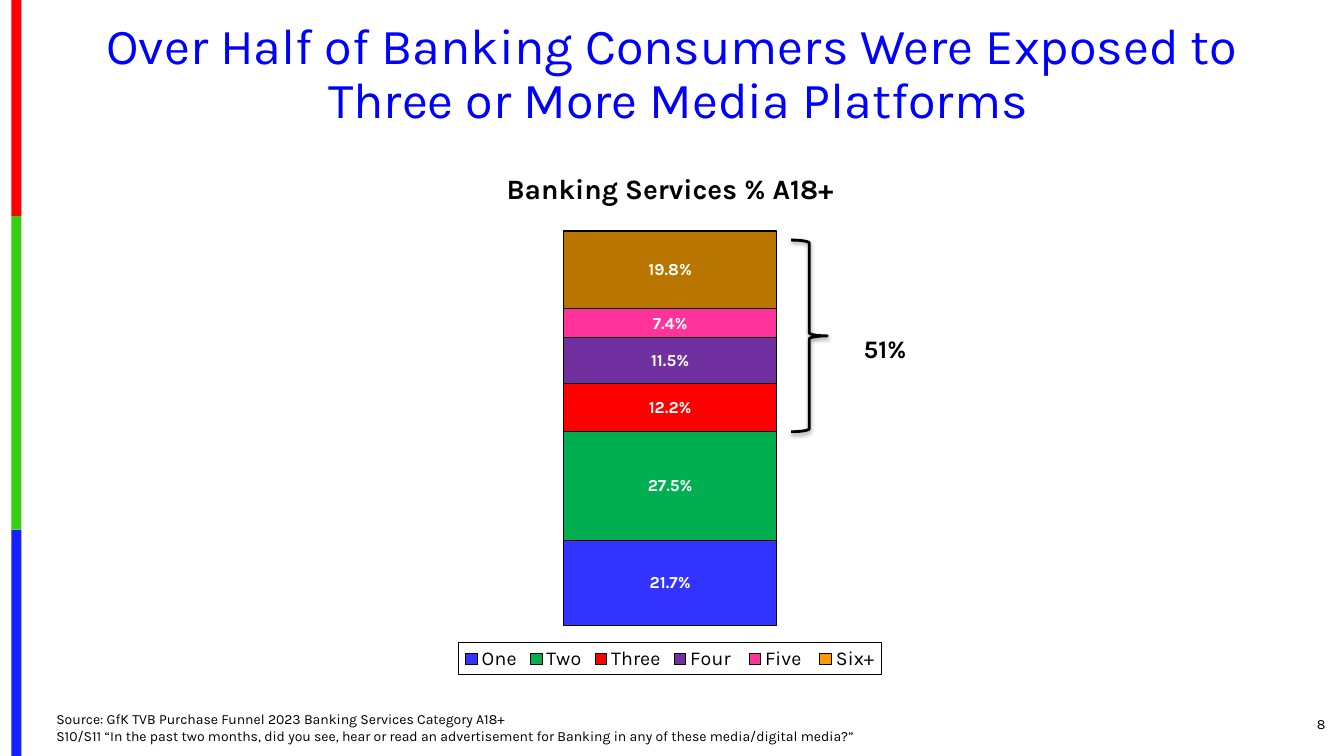
from lxml import etree
from pptx import Presentation
from pptx.chart.data import CategoryChartData
from pptx.dml.color import RGBColor
from pptx.enum.chart import XL_CHART_TYPE as ChartType, XL_LEGEND_POSITION as LegendPos
from pptx.enum.shapes import MSO_SHAPE as Shape
from pptx.enum.text import MSO_ANCHOR as Anchor, PP_ALIGN as Align
from pptx.oxml import parse_xml
from pptx.oxml.ns import nsdecls, qn
from pptx.util import Cm, Pt

FONT = "Karla"
COLORS = {
    "black": "000000", "white": "FFFFFF", "title": "0000FF",
    "stripe_red": "FE0000", "stripe_green": "36CF12", "stripe_blue": "1322FE",
    "One": "3333FF", "Two": "00B050", "Three": "FF0000",
    "Four ": "7030A0", "Five ": "FF3399", "Six+": "FF9900", "six_bar": "B87600",
}
SHARES = {"One": 0.217, "Two": 0.275, "Three": 0.122,
          "Four ": 0.115, "Five ": 0.074, "Six+": 0.198}


def rgb(name):
    return RGBColor.from_string(COLORS[name])


def style_font(font, size, color="black", bold=False):
    font.name = FONT
    font.size = Pt(size)
    font.bold = bold
    font.color.rgb = rgb(color)


def add_text(slide, box, lines, size, color="black", bold=False,
             align=Align.LEFT, anchor=Anchor.TOP, spacing=None):
    frame = slide.shapes.add_textbox(*map(Cm, box)).text_frame
    frame.word_wrap = True
    frame.vertical_anchor = anchor
    paragraph = frame.paragraphs[0]
    paragraph.alignment = align
    paragraph.line_spacing = spacing
    for index, line in enumerate(lines):
        if index:
            paragraph.add_line_break()
        run = paragraph.add_run()
        run.text = line
        style_font(run.font, size, color, bold)


def add_stripes(slide, box):
    left, top, width, _ = box
    for color, height in (("stripe_red", 5.45), ("stripe_green", 7.9), ("stripe_blue", 5.7)):
        stripe = slide.shapes.add_shape(
            Shape.RECTANGLE, Cm(left), Cm(top), Cm(width), Cm(height))
        stripe.shadow.inherit = False
        stripe.fill.solid()
        stripe.fill.fore_color.rgb = rgb(color)
        stripe.line.fill.background()
        top += height


def set_layout(element, x, y, w, h, inner=False):
    for old in element.findall(qn("c:layout")):
        element.remove(old)
    target = '<c:layoutTarget val="inner"/>' if inner else ""
    layout = parse_xml(
        f'<c:layout {nsdecls("c")}><c:manualLayout>{target}'
        '<c:xMode val="edge"/><c:yMode val="edge"/>'
        f'<c:x val="{x}"/><c:y val="{y}"/><c:w val="{w}"/><c:h val="{h}"/>'
        '</c:manualLayout></c:layout>')
    if inner:
        element.insert(0, layout)
    else:
        element.find(qn("c:legendPos")).addnext(layout)


def outline(chart_format, color):
    chart_format.fill.solid()
    chart_format.fill.fore_color.rgb = rgb(color)
    chart_format.line.color.rgb = rgb("black")
    chart_format.line.width = Pt(0.75)


def add_platform_chart(slide, box):
    data = CategoryChartData(number_format="0.0%")
    data.categories = ["1"]
    for name, share in SHARES.items():
        data.add_series(name, [share])
    chart = slide.shapes.add_chart(ChartType.COLUMN_STACKED, *map(Cm, box), data).chart
    chart.has_title = False
    style_font(chart.font, 10)
    chart.category_axis.visible = False
    shares_axis = chart.value_axis
    shares_axis.visible = False
    shares_axis.has_major_gridlines = False
    shares_axis.minimum_scale = 0
    shares_axis.maximum_scale = 1

    plot = chart.plots[0]
    plot.vary_by_categories = False
    plot.gap_width = 150
    plot.overlap = 100
    for series in plot.series:
        outline(series.format, series.name)
        labels = series.data_labels
        labels.show_value = True
        labels.number_format = "0.0%"
        labels.number_format_is_linked = False
        style_font(labels.font, 12, "white", True)
    outline(plot.series[-1].points[0].format, "six_bar")

    chart.has_legend = True
    legend = chart.legend
    legend.position = LegendPos.BOTTOM
    legend.include_in_layout = False
    style_font(legend.font, 14)
    legend_xml = chart.element.find(".//" + qn("c:legend"))
    set_layout(legend_xml, 0.12, 0.94, 0.76, 0.06)
    legend_xml.find(qn("c:txPr")).addprevious(parse_xml(
        f'<c:spPr {nsdecls("c", "a")}><a:ln w="9525"><a:solidFill>'
        f'<a:srgbClr val="{COLORS["black"]}"/></a:solidFill></a:ln></c:spPr>'))
    set_layout(chart.element.find(".//" + qn("c:plotArea")), 0.02, 0.167, 0.96, 0.741, True)


def add_brace(slide, box):
    brace = slide.shapes.add_shape(Shape.RIGHT_BRACE, *map(Cm, box))
    brace.fill.background()
    brace.line.color.rgb = rgb("black")
    brace.line.width = Pt(2)
    brace.shadow.inherit = False
    effects = brace.element.spPr.find(qn("a:effectLst"))
    shadow = etree.SubElement(effects, qn("a:outerShdw"), blurRad=str(Pt(3.1)),
                              dist=str(Pt(1.6)), dir="5400000", rotWithShape="0")
    tint = etree.SubElement(shadow, qn("a:srgbClr"), val=COLORS["black"])
    etree.SubElement(tint, qn("a:alpha"), val="38000")


def add_exposure(slide, box):
    left, top, width, _ = box
    add_platform_chart(slide, box)
    heading_width = 9.86
    add_text(slide, (left + (width - heading_width) / 2, top + 0.61, heading_width, 1.12),
             ["Banking Services % A18+"], 20, bold=True, align=Align.CENTER)
    add_brace(slide, (left + 10.06, top + 2.47, 0.91, 4.83))
    add_text(slide, (left + 11.28, top + 4.7, 2.29, 1.02), ["51%"], 18,
             bold=True, align=Align.CENTER)


def add_footer(slide, box):
    left, top, width, height = box
    add_text(slide, (left, top, 24.08, height), [
        "Source: GfK TVB Purchase Funnel 2023 Banking Services Category A18+",
        "S10/S11 “In the past two months, did you see, hear or read an advertisement "
        "for Banking in any of these media/digital media?”"], 10)
    number_width = 2.74
    add_text(slide, (left + width - number_width, top - 0.05, number_width, 1.02), ["8"], 10,
             align=Align.RIGHT, anchor=Anchor.MIDDLE)


def main():
    deck = Presentation()
    deck.slide_width, deck.slide_height = Cm(33.87), Cm(19.05)
    slide = deck.slides.add_slide(deck.slide_layouts[6])
    add_stripes(slide, (0.29, 0, 0.25, 19.05))
    add_exposure(slide, (9.88, 3.58, 14.02, 13.44))
    add_text(slide, (1.17, 0.38, 31.55, 3.02),
             ["Over Half of Banking Consumers Were Exposed to",
              " Three or More Media Platforms"],
             36, "title", align=Align.CENTER, anchor=Anchor.MIDDLE, spacing=0.9)
    add_footer(slide, (1.17, 17.78, 32.48, 1.12))
    deck.save("out.pptx")


if __name__ == "__main__":
    main()
